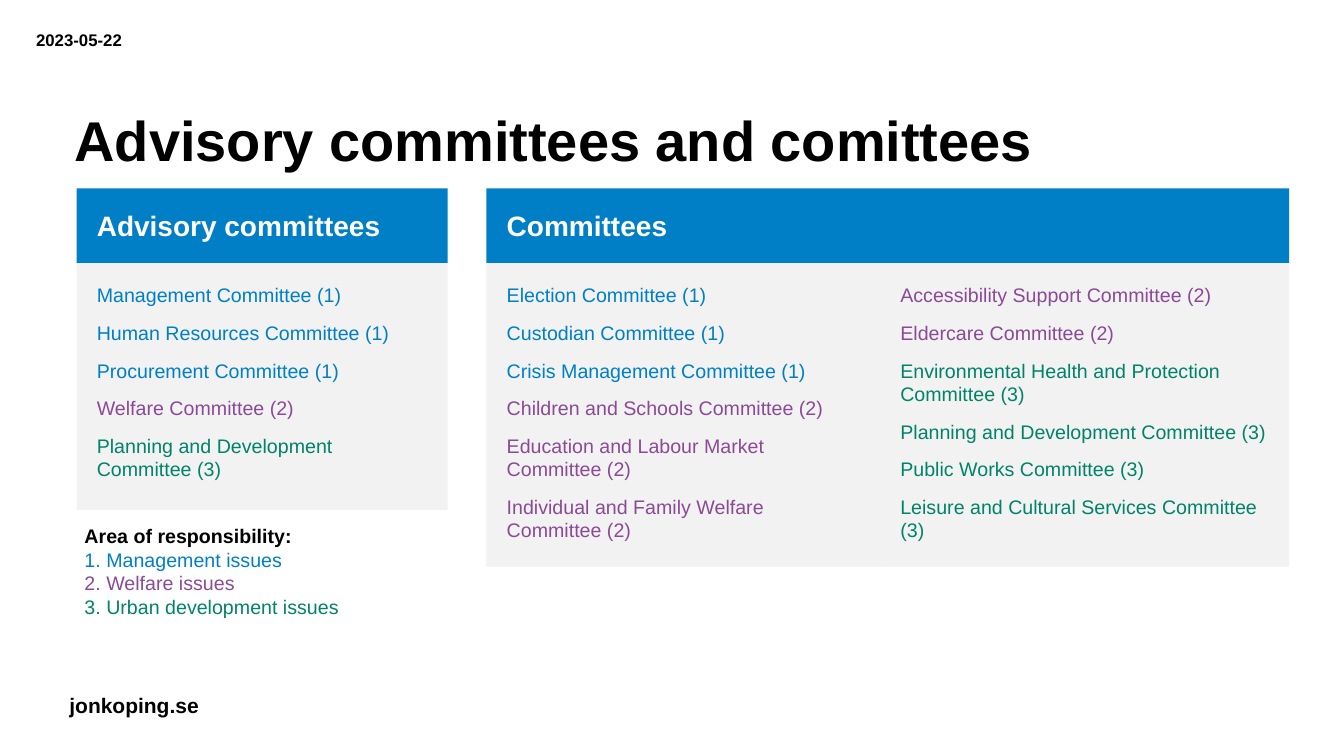
from dataclasses import dataclass

from pptx import Presentation
from pptx import util as u
from pptx.dml.color import RGBColor
from pptx.enum import shapes, text


@dataclass(frozen=True)
class Theme:
    font: str = "Arial"
    black: str = "000000"
    white: str = "FFFFFF"
    header: str = "007FC7"
    panel: str = "F2F2F2"
    areas: tuple = ("007FC7", "8B4A96", "008369")
    title_size: int = 40
    header_size: int = 20
    site_size: int = 15
    body_size: int = 14
    date_size: int = 12


@dataclass(frozen=True)
class Box:
    """A rectangle in centimetres."""
    left: float
    top: float
    width: float
    height: float

    def lengths(self):
        return [u.Cm(n) for n in (self.left, self.top, self.width, self.height)]


THEME = Theme()
HEADER_HEIGHT = 1.88
PADDING = 0.51
AREAS = ["Management issues", "Welfare issues", "Urban development issues"]
ADVISORY = [[
    ("Management Committee", 1),
    ("Human Resources Committee", 1),
    ("Procurement Committee", 1),
    ("Welfare Committee", 2),
    ("Planning and Development Committee", 3),
]]
COMMITTEES = [[
    ("Election Committee", 1),
    ("Custodian Committee", 1),
    ("Crisis Management Committee", 1),
    ("Children and Schools Committee", 2),
    ("Education and Labour Market Committee", 2),
    ("Individual and Family Welfare Committee", 2),
], [
    ("Accessibility Support Committee", 2),
    ("Eldercare Committee", 2),
    ("Environmental Health and Protection Committee", 3),
    ("Planning and Development Committee", 3),
    ("Public Works Committee", 3),
    ("Leisure and Cultural Services Committee", 3),
]]


def write(frame, lines, size, gap=0):
    """Fill a text frame with (wording, colour, bold) lines, gap points apart."""
    frame.text = "\n".join(wording for wording, _, _ in lines)
    for index, (paragraph, line) in enumerate(zip(frame.paragraphs, lines)):
        paragraph.alignment = text.PP_ALIGN.LEFT
        if index and gap:
            paragraph.space_before = u.Pt(gap)
        font = paragraph.runs[0].font
        font.name, font.size, font.bold = THEME.font, u.Pt(size), line[2]
        font.color.rgb = RGBColor.from_string(line[1])


def set_margins(frame, horizontal, vertical):
    frame.margin_left = frame.margin_right = u.Cm(horizontal)
    frame.margin_top = frame.margin_bottom = u.Cm(vertical)


def add_text(slide, box, lines, size, margins=(0, 0), wrap=True):
    frame = slide.shapes.add_textbox(*box.lengths()).text_frame
    frame.word_wrap = wrap
    set_margins(frame, *margins)
    write(frame, lines, size)
    return frame


def add_block(slide, box, fill, lines, size, vertical_padding, anchor):
    block = slide.shapes.add_shape(shapes.MSO_SHAPE.RECTANGLE, *box.lengths())
    block.shadow.inherit = False
    block.fill.solid()
    block.fill.fore_color.rgb = RGBColor.from_string(fill)
    block.line.fill.background()
    frame = block.text_frame
    frame.word_wrap = True
    frame.vertical_anchor = anchor
    set_margins(frame, PADDING, vertical_padding)
    write(frame, lines, size, gap=10)


def add_committee_panel(slide, box, heading, columns, widths):
    """Place a header bar over one grey block for each column."""
    add_block(slide, Box(box.left, box.top, box.width, HEADER_HEIGHT), THEME.header,
              [(heading, THEME.white, True)], THEME.header_size, 0,
              text.MSO_ANCHOR.MIDDLE)
    left = box.left
    for committees, width in zip(columns, widths):
        lines = [(f"{name} ({area})", THEME.areas[area - 1], False)
                 for name, area in committees]
        column = Box(left, box.top + HEADER_HEIGHT, width, box.height - HEADER_HEIGHT)
        add_block(slide, column, THEME.panel, lines, THEME.body_size, PADDING,
                  text.MSO_ANCHOR.TOP)
        left += width


def add_title(slide, box, wording):
    frame = add_text(slide, box, [(wording, THEME.black, True)], THEME.title_size)
    frame.vertical_anchor = text.MSO_ANCHOR.BOTTOM
    frame.paragraphs[0].line_spacing = 0.9


def add_legend(slide, box):
    lines = [("Area of responsibility:", THEME.black, True)]
    lines += [(f"{number}. {area}", colour, False)
              for number, (area, colour) in enumerate(zip(AREAS, THEME.areas), 1)]
    add_text(slide, box, lines, THEME.body_size, (0.25, 0.13), wrap=False)


def main():
    presentation = Presentation()
    presentation.slide_width, presentation.slide_height = u.Cm(33.87), u.Cm(19.05)
    slide = presentation.slides.add_slide(presentation.slide_layouts[6])

    add_text(slide, Box(1.5, 17.32, 3.81, 0.89),
             [("jonkoping.se", THEME.black, True)], THEME.site_size,
             (0.25, 0.13), wrap=False)
    add_title(slide, Box(1.88, 1.27, 30.07, 3.1), "Advisory committees and comittees")
    add_text(slide, Box(0.91, 0.76, 2.49, 0.51),
             [("2023-05-22", THEME.black, True)], THEME.date_size)
    add_committee_panel(slide, Box(1.93, 4.75, 9.35, 8.1),
                        "Advisory committees", ADVISORY, [9.35])
    add_committee_panel(slide, Box(12.26, 4.75, 20.23, 9.53),
                        "Committees", COMMITTEES, [9.92, 10.31])
    add_legend(slide, Box(1.88, 13.08, 6.96, 2.64))
    presentation.save("out.pptx")


if __name__ == "__main__":
    main()
